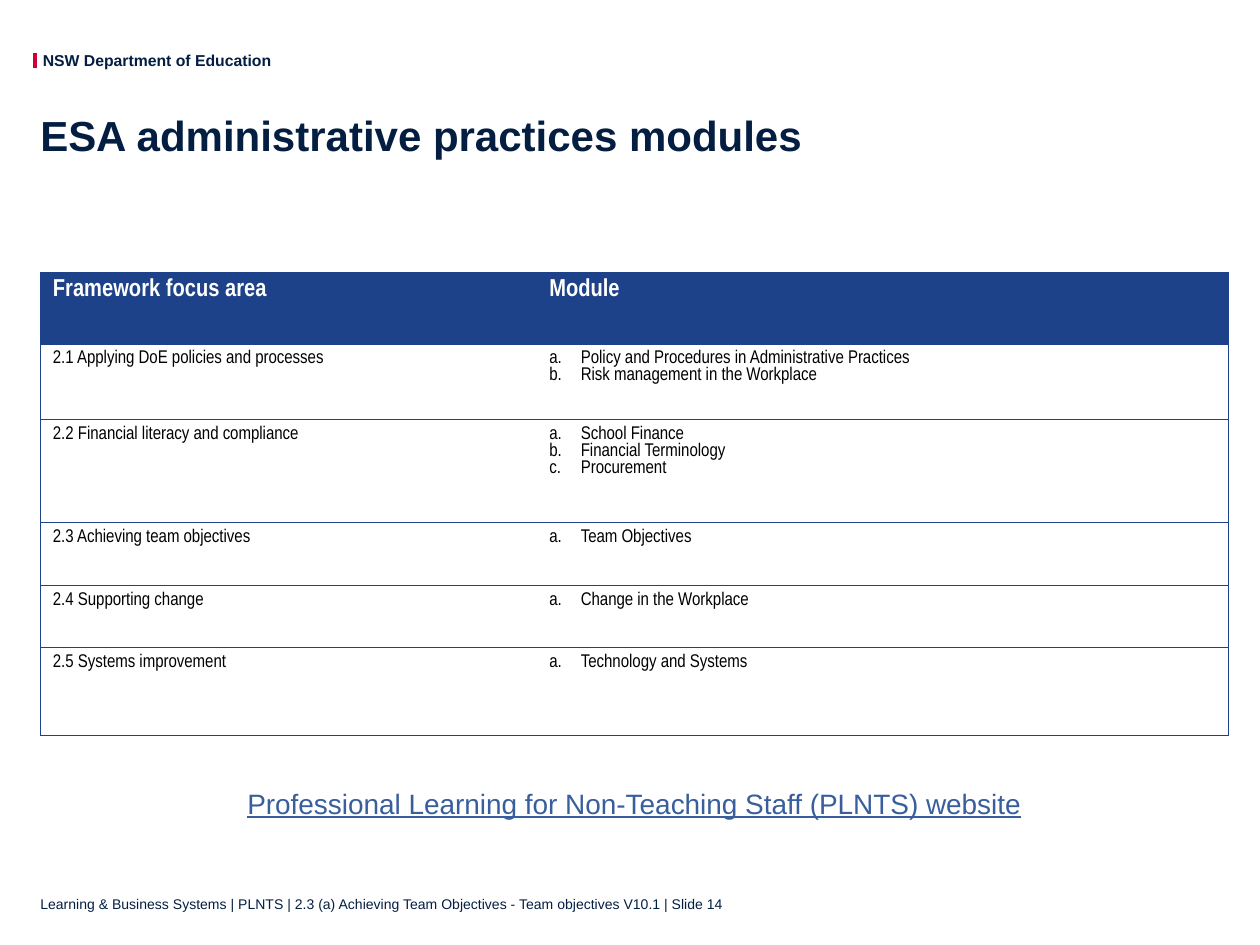
"""Build the slide that lists the ESA administrative practices modules."""
from lxml.etree import SubElement as Sub
from pptx import Presentation
from pptx.dml.color import RGBColor as Rgb
from pptx.enum.shapes import MSO_CONNECTOR as Link
from pptx.enum.text import MSO_ANCHOR as Anchor, PP_ALIGN as Align
from pptx.oxml.ns import qn
from pptx.util import Inches, Pt

BRAND = "NSW Department of Education"
TITLE = "ESA administrative practices modules"
HEAD = ("Framework focus area", "Module")
AREAS = [
    ("2.1 Applying DoE policies and processes",
     ["Policy and Procedures in Administrative Practices",
      "Risk management in the Workplace"]),
    ("2.2 Financial literacy and compliance",
     ["School Finance", "Financial Terminology", "Procurement"]),
    ("2.3 Achieving team objectives", ["Team Objectives"]),
    ("2.4 Supporting change", ["Change in the Workplace"]),
    ("2.5 Systems improvement", ["Technology and Systems"]),
]
SITE = "Professional Learning for Non-Teaching Staff (PLNTS) website"
FOOT = ("Learning & Business Systems | PLNTS | 2.3 (a) Achieving Team "
        "Objectives - Team objectives V10.1 | Slide 14")

THEME = {
    "navy": "041E42", "blue": "1D428A", "red": "CE0037", "link": "385E9D",
    "white": "FFFFFF", "black": "000000",
    "sans": "Arial", "thin": "Arial Narrow",
    "brand": 9, "title": 24, "head": 14, "cell": 10.5, "site": 16, "foot": 8,
    "rule": 0.5, "bar": 2.5,
}
WIDE, HIGH = 10, 7.5
LEFT, SPAN = 0.32, 9.43
COLS = (3.94, 5.49)
ROWS = (0.57, 0.6, 0.82, 0.5, 0.49, 0.7)


def hue(name):
    return Rgb.from_string(THEME[name])


def style(para, size, color, face="sans", bold=False, line=False):
    for run in para.runs:
        font = run.font
        font.name, font.size = THEME[face], Pt(THEME[size])
        font.bold, font.underline = bold, line
        font.color.rgb = hue(color)


def label(slide, text, area, size, color, anchor=Anchor.TOP, pad=0,
          wrap=True, **look):
    frame = slide.shapes.add_textbox(*map(Inches, area)).text_frame
    frame.word_wrap, frame.vertical_anchor = wrap, anchor
    frame.margin_left = frame.margin_right = Inches(pad)
    frame.margin_top = frame.margin_bottom = Inches(pad / 2)
    frame.text = text
    para = frame.paragraphs[0]
    style(para, size, color, **look)
    return para


def border(cell, first, last):
    props = cell._tc.get_or_add_tcPr()
    for side, shown in (("L", first), ("R", last), ("T", True), ("B", True)):
        edge = Sub(props, qn("a:ln" + side), w=str(Pt(THEME["rule"])))
        if shown:
            fill = Sub(edge, qn("a:solidFill"))
            Sub(fill, qn("a:srgbClr"), val=THEME["blue"])
        else:
            Sub(edge, qn("a:noFill"))


def letter(para):
    props = para._p.get_or_add_pPr()
    props.set("marL", str(Inches(0.25)))
    props.set("indent", str(Inches(-0.25)))
    Sub(props, qn("a:buFont"), typeface="+mj-lt")
    Sub(props, qn("a:buAutoNum"), type="alphaLcPeriod")


def grid(slide):
    area = (LEFT, 2.16, SPAN, sum(ROWS))
    table = slide.shapes.add_table(
        len(ROWS), len(COLS), *map(Inches, area)).table
    for col, width in zip(table.columns, COLS):
        col.width = Inches(width)
    for row, height in zip(table.rows, ROWS):
        row.height = Inches(height)
    for i, texts in enumerate([HEAD, *AREAS]):
        for j, text in enumerate(texts):
            cell = table.cell(i, j)
            border(cell, j == 0, j == len(COLS) - 1)
            if i == 0:
                cell.fill.solid()
                cell.fill.fore_color.rgb = hue("blue")
            else:
                cell.fill.background()
            listed = isinstance(text, list)
            cell.text_frame.text = "\n".join(text) if listed else text
            for para in cell.text_frame.paragraphs:
                if listed:
                    letter(para)
                if i == 0:
                    style(para, "head", "white", "thin", bold=True)
                else:
                    style(para, "cell", "black", "thin")


def main():
    deck = Presentation()
    deck.slide_width, deck.slide_height = Inches(WIDE), Inches(HIGH)
    slide = deck.slides.add_slide(deck.slide_layouts[6])
    bar = slide.shapes.add_connector(
        Link.STRAIGHT, *map(Inches, (0.28, 0.42, 0.28, 0.54)))
    bar.line.color.rgb, bar.line.width = hue("red"), Pt(THEME["bar"])
    Sub(bar._element.spPr, qn("a:effectLst"))
    label(slide, BRAND, (0.34, 0.4, 1.83, 0.15), "brand", "navy",
          wrap=False, bold=True)
    title = label(slide, TITLE, (LEFT, 0.82, SPAN, 0.55), "title", "navy",
                  Anchor.MIDDLE, bold=True)
    title.line_spacing = 0.9
    grid(slide)
    site = label(slide, SITE, (LEFT, 6.19, SPAN, 0.37), "site", "link",
                 pad=0.1, line=True)
    site.alignment = Align.CENTER
    label(slide, FOOT, (LEFT, 6.84, SPAN, 0.4), "foot", "navy", Anchor.BOTTOM)
    deck.save("out.pptx")


if __name__ == "__main__":
    main()
